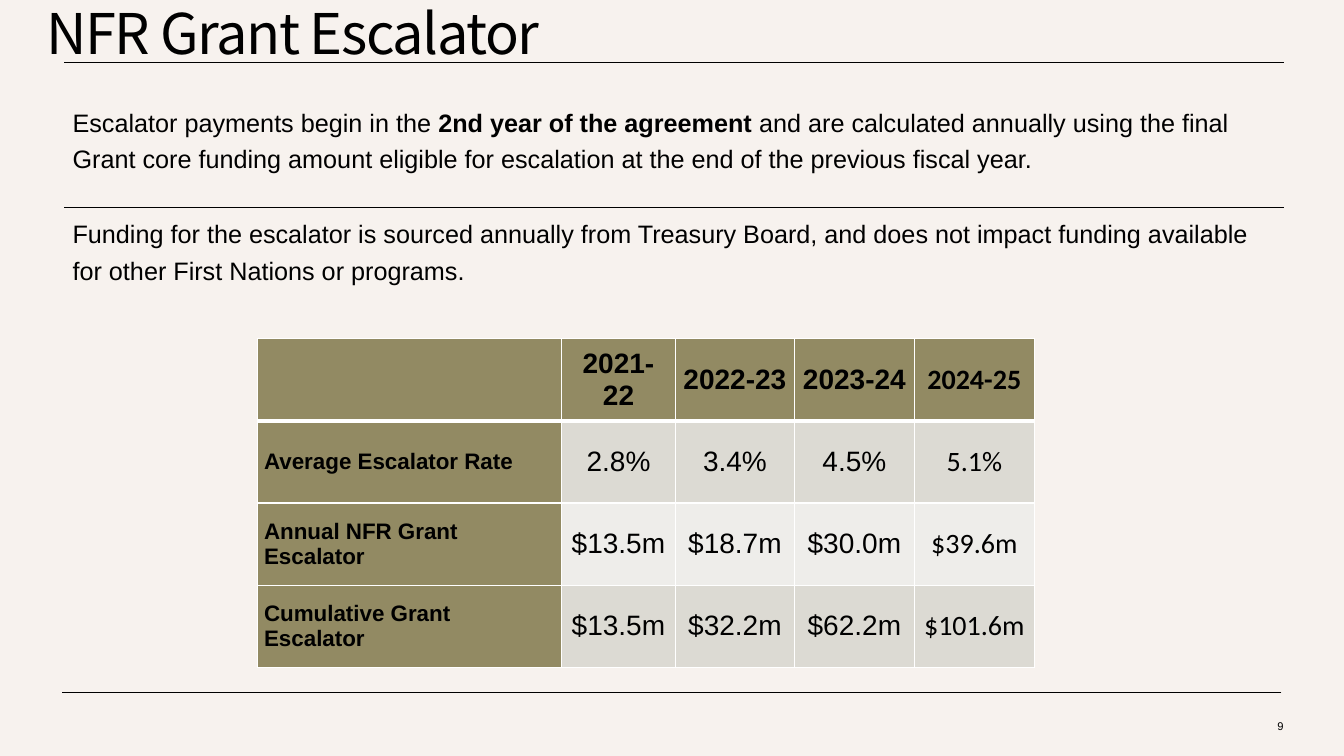
from dataclasses import dataclass

from lxml.etree import SubElement
from pptx import Presentation
from pptx.dml.color import RGBColor
from pptx.enum.shapes import MSO_CONNECTOR
from pptx.enum.text import MSO_ANCHOR, MSO_AUTO_SIZE, PP_ALIGN
from pptx.oxml.ns import qn
from pptx.slide import Slide
from pptx.table import _Cell
from pptx.text.text import _Paragraph
from pptx.util import Inches, Pt


@dataclass(frozen=True)
class Theme:
    background: str = "F7F2EE"
    ink: str = "000000"
    border: str = "FFFFFF"
    olive: str = "928A63"
    bands: tuple[str, str] = ("DCDAD3", "EEEDEA")
    title_font: str = "Noto Sans CJK KR"
    text_font: str = "Arial"
    latest_year_font: str = "Calibri"
    title_size: int = 40
    body_size: int = 18
    figure_size: int = 20
    label_size: int = 16
    number_size: int = 8


@dataclass(frozen=True)
class Rule:
    left: float
    right: float
    top: float


@dataclass(frozen=True)
class EscalatorRow:
    label: str
    figures: tuple[str, ...]


THEME = Theme()
RULES = (Rule(0.62, 12.71, 6.87), Rule(0.63, 12.73, 2.06), Rule(0.63, 12.73, 0.62))
ROWS = (
    EscalatorRow("", ("2021-22", "2022-23", "2023-24", "2024-25")),
    EscalatorRow("Average Escalator Rate", ("2.8%", "3.4%", "4.5%", "5.1%")),
    EscalatorRow("Annual NFR Grant Escalator", ("$13.5m", "$18.7m", "$30.0m", "$39.6m")),
    EscalatorRow("Cumulative Grant Escalator", ("$13.5m", "$32.2m", "$62.2m", "$101.6m")),
)
COLUMN_WIDTHS = (3.02, 1.13, 1.18, 1.19, 1.19)
ROW_HEIGHT = 0.815
BODY = (
    (
        ("Escalator payments begin in the ", False),
        ("2nd year of the agreement ", True),
        ("and are calculated annually using the final Grant core funding amount "
         "eligible for escalation at the end of the previous fiscal year.", False),
    ),
    (
        ("Funding for the escalator is sourced annually from Treasury Board, and does "
         "not impact funding available for other First Nations or programs.", False),
    ),
)


def style(paragraph: _Paragraph, font_name: str, size: int) -> None:
    paragraph.font.name = font_name
    paragraph.font.size = Pt(size)
    paragraph.font.color.rgb = RGBColor.from_string(THEME.ink)


def place(shape, left: float, top: float, width: float, height: float) -> None:
    shape.left, shape.top = Inches(left), Inches(top)
    shape.width, shape.height = Inches(width), Inches(height)


def add_rule(slide: Slide, rule: Rule) -> None:
    connector = slide.shapes.add_connector(
        MSO_CONNECTOR.STRAIGHT,
        Inches(rule.right), Inches(rule.top), Inches(rule.left), Inches(rule.top),
    )
    connector.line.color.rgb = RGBColor.from_string(THEME.ink)
    connector.line.width = Pt(0.5)
    SubElement(connector._element.spPr, qn("a:effectLst"))


def fill_title(slide: Slide) -> None:
    title = slide.shapes.title
    place(title, 0.36, -0.23, 12.08, 1.19)
    frame = title.text_frame
    frame.text = "NFR Grant Escalator"
    frame.auto_size = MSO_AUTO_SIZE.NONE
    frame.vertical_anchor = MSO_ANCHOR.MIDDLE
    paragraph = frame.paragraphs[0]
    paragraph.alignment = PP_ALIGN.LEFT
    paragraph.line_spacing = 0.9
    style(paragraph, THEME.title_font, THEME.title_size)
    paragraph.runs[0].font._element.set("spc", "-100")


def fill_body(slide: Slide) -> None:
    body = slide.placeholders[1]
    place(body, 0.62, 0.95, 12.1, 2.28)
    frame = body.text_frame
    frame.auto_size = MSO_AUTO_SIZE.NONE
    for index, pieces in enumerate(BODY):
        paragraph = frame.add_paragraph() if index else frame.paragraphs[0]
        properties = paragraph._p.get_or_add_pPr()
        properties.set("marL", "0")
        properties.set("indent", "0")
        SubElement(properties, qn("a:buNone"))
        paragraph.line_spacing = 1.2
        paragraph.space_before = Pt(28 if index else 0)
        style(paragraph, THEME.text_font, THEME.body_size)
        for text, bold in pieces:
            run = paragraph.add_run()
            run.text = text
            run.font.bold = bold


def add_slide_number(slide: Slide) -> None:
    box = slide.shapes.add_textbox(Inches(12.06), Inches(7), Inches(0.77), Inches(0.4))
    frame = box.text_frame
    frame.word_wrap = True
    frame.vertical_anchor = MSO_ANCHOR.MIDDLE
    frame.text = "9"
    paragraph = frame.paragraphs[0]
    paragraph.alignment = PP_ALIGN.RIGHT
    style(paragraph, THEME.text_font, THEME.number_size)


def add_borders(cell: _Cell, bottom_width: int) -> None:
    properties = cell._tc.get_or_add_tcPr()
    for side, width in (("L", 1), ("R", 1), ("T", 1), ("B", bottom_width)):
        line = SubElement(properties, qn(f"a:ln{side}"), w=str(Pt(width)))
        fill = SubElement(line, qn("a:solidFill"))
        SubElement(fill, qn("a:srgbClr"), val=THEME.border)


def fill_cell(cell: _Cell, text: str, row: int, column: int) -> None:
    is_header, is_label = row == 0, column == 0
    add_borders(cell, 3 if is_header else 1)
    color = THEME.olive if is_header or is_label else THEME.bands[(row - 1) % 2]
    cell.fill.solid()
    cell.fill.fore_color.rgb = RGBColor.from_string(color)
    cell.vertical_anchor = MSO_ANCHOR.MIDDLE
    cell.margin_left = cell.margin_right = Inches(0.07)
    cell.margin_top = cell.margin_bottom = Inches(0)
    cell.text = text
    paragraph = cell.text_frame.paragraphs[0]
    paragraph.alignment = PP_ALIGN.LEFT if is_label else PP_ALIGN.CENTER
    is_latest = column == len(COLUMN_WIDTHS) - 1
    style(
        paragraph,
        THEME.latest_year_font if is_latest else THEME.text_font,
        THEME.label_size if is_label else THEME.figure_size,
    )
    paragraph.font.bold = is_header or is_label


def add_escalator_table(slide: Slide) -> None:
    table = slide.shapes.add_table(
        len(ROWS), len(COLUMN_WIDTHS), Inches(2.55), Inches(3.36),
        Inches(sum(COLUMN_WIDTHS)), Inches(ROW_HEIGHT * len(ROWS)),
    ).table
    for column, width in zip(table.columns, COLUMN_WIDTHS):
        column.width = Inches(width)
    for row, entry in enumerate(ROWS):
        table.rows[row].height = Inches(ROW_HEIGHT)
        for column, text in enumerate((entry.label, *entry.figures)):
            fill_cell(table.cell(row, column), text, row, column)


def main() -> None:
    presentation = Presentation()
    presentation.slide_width, presentation.slide_height = Inches(13.33), Inches(7.5)
    slide = presentation.slides.add_slide(presentation.slide_layouts[1])
    slide.background.fill.solid()
    slide.background.fill.fore_color.rgb = RGBColor.from_string(THEME.background)
    for rule in RULES:
        add_rule(slide, rule)
    fill_title(slide)
    fill_body(slide)
    add_slide_number(slide)
    add_escalator_table(slide)
    presentation.save("out.pptx")


if __name__ == "__main__":
    main()
